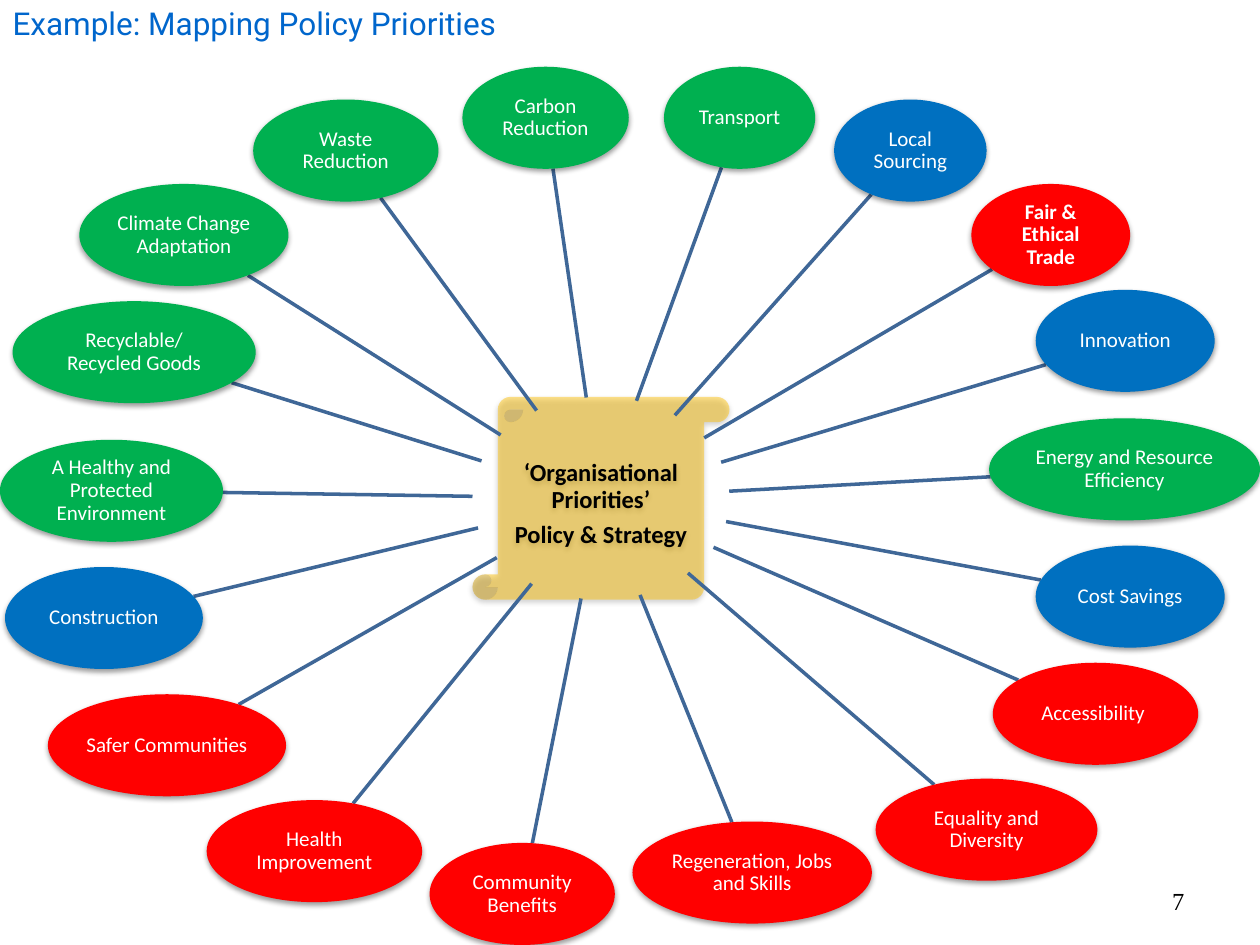
"""Build a slide mapping policy priorities around a central scroll."""
from math import hypot

from lxml import etree
from pptx import Presentation
from pptx import util as u
from pptx.dml.color import RGBColor
from pptx.enum import shapes, text
from pptx.oxml.ns import qn

GREEN, BLUE, RED = "00B050", "0070C0", "FF0000"
TITLE = "Example: Mapping Policy Priorities"
CORE = ["‘Organisational Priorities’", "Policy & Strategy"]
HUB = (3.75, 3.15, 2.04, 1.61)
TALL = 0.81
THEMES = [
    ("Carbon Reduction", GREEN, 3.67, 0.53, 1.32),
    ("Transport", GREEN, 5.27, 0.53, 1.2),
    ("Local Sourcing", BLUE, 6.62, 0.79, 1.21),
    ("Fair & Ethical Trade", RED, 7.71, 1.46, 1.26),
    ("Innovation", BLUE, 8.22, 2.3, 1.42),
    ("Energy and Resource Efficiency", GREEN, 7.85, 3.32, 2.15),
    ("Cost Savings", BLUE, 8.22, 4.33, 1.5),
    ("Accessibility ", RED, 7.88, 5.26, 1.63),
    ("Equality and Diversity", RED, 6.95, 6.18, 1.76),
    ("Regeneration, Jobs and Skills", RED, 5.02, 6.52, 1.9),
    ("Community Benefits", RED, 3.41, 6.69, 1.47),
    ("Health Improvement", RED, 1.64, 6.35, 1.71),
    ("Safer Communities", RED, 0.38, 5.51, 1.89),
    ("Construction", BLUE, 0.04, 4.5, 1.57),
    ("A Healthy and Protected Environment", GREEN, 0, 3.49, 1.77),
    ("Recyclable/ Recycled Goods", GREEN, 0.1, 2.39, 1.93),
    ("Climate Change Adaptation", GREEN, 0.63, 1.46, 1.66),
    ("Waste Reduction", GREEN, 2.01, 0.79, 1.47),
]
BOLD = "Fair & Ethical Trade"


def paint(form, tone):
    form.rgb = RGBColor.from_string(tone)


def write(shape, lines, size=12, font="Calibri", tone="FFFFFF", bold=False,
          align=text.PP_ALIGN.CENTER, anchor=text.MSO_ANCHOR.MIDDLE,
          inset=None, gap=0, lead=1.0):
    frame = shape.text_frame
    frame.word_wrap = True
    frame.auto_size = text.MSO_AUTO_SIZE.NONE
    frame.vertical_anchor = anchor
    if inset is not None:
        frame.margin_left = frame.margin_right = u.Inches(inset)
        frame.margin_top = frame.margin_bottom = u.Inches(inset)
    frame.text = "\n".join(lines)
    for para in frame.paragraphs:
        para.alignment, para.line_spacing = align, lead
        para.space_before, para.space_after = u.Pt(0), u.Pt(gap * size)
        face = para.font
        face.size, face.name, face.bold = u.Pt(size), font, bold
        paint(face.color, tone)


def shade(shape):
    shape.shadow.inherit = False
    effects = shape._element.spPr.find(qn("a:effectLst"))
    drop = etree.SubElement(effects, qn("a:outerShdw"), blurRad=str(u.Pt(3.1)),
                            dist=str(u.Pt(1.6)), dir="5400000", rotWithShape="0")
    tint = etree.SubElement(drop, qn("a:srgbClr"), val="000000")
    etree.SubElement(tint, qn("a:alpha"), val="38000")


def place(slide, kind, box, fill, lines, **style):
    shape = slide.shapes.add_shape(kind, *map(u.Inches, box))
    shape.fill.solid()
    paint(shape.fill.fore_color, fill)
    shape.line.fill.background()
    shade(shape)
    write(shape, lines, inset=0.01, gap=0.35, lead=0.9, **style)
    return shape


def centre(box):
    left, top, wide, high = box
    return left + wide / 2, top + high / 2


def edge(box, goal):
    x, y = centre(box)
    dx, dy = goal[0] - x, goal[1] - y
    reach = hypot(2 * dx / box[2], 2 * dy / box[3])
    return x + dx / reach, y + dy / reach


def spoke(slide, box):
    ends = edge(HUB, centre(box)) + edge(box, centre(HUB))
    line = slide.shapes.add_connector(shapes.MSO_CONNECTOR.STRAIGHT,
                                      *map(u.Inches, ends))
    line.line.width = u.Pt(2)
    paint(line.line.color, "3F6797")
    etree.SubElement(line._element.spPr, qn("a:effectLst"))


def main():
    deck = Presentation()
    deck.slide_width, deck.slide_height = u.Inches(10), u.Inches(7.5)
    slide = deck.slides.add_slide(deck.slide_layouts[5])

    title = slide.shapes.title
    title.left, title.top, title.width, title.height = map(
        u.Inches, (0, -0.02, 6.23, 0.4))
    write(title, [TITLE], size=18, font="Roboto", tone="0066CC",
          align=text.PP_ALIGN.LEFT, anchor=text.MSO_ANCHOR.TOP)

    kinds = shapes.MSO_SHAPE
    scroll = place(slide, kinds.VERTICAL_SCROLL, HUB, "FFC000", CORE,
                   size=14, tone="000000", bold=True)
    fill = scroll._element.spPr.find(qn("a:solidFill"))
    etree.SubElement(fill[0], qn("a:alpha"), val="46000")

    for label, fill, left, top, wide in THEMES:
        box = (left, top, wide, TALL)
        spoke(slide, box)
        place(slide, kinds.OVAL, box, fill, [label], bold=label == BOLD)

    page = slide.shapes.add_textbox(*map(u.Inches, (7.17, 6.95, 2.33, 0.4)))
    write(page, ["7"], size=14, font="Times New Roman", tone="000000",
          align=text.PP_ALIGN.RIGHT)
    deck.save("out.pptx")


if __name__ == "__main__":
    main()
